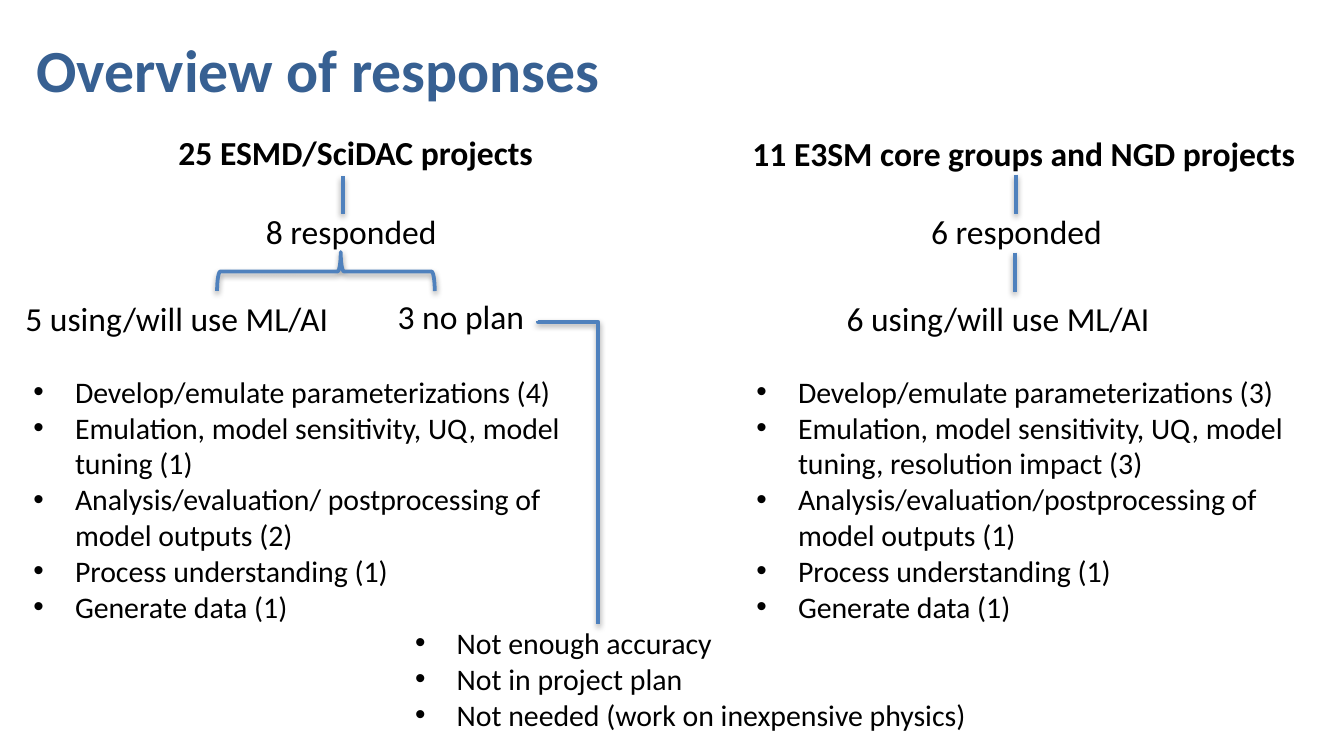
from lxml import etree
from pptx import Presentation
from pptx.dml.color import RGBColor
from pptx.enum.shapes import MSO_CONNECTOR, MSO_SHAPE
from pptx.enum.text import MSO_ANCHOR
from pptx.oxml import parse_xml
from pptx.oxml.ns import qn
from pptx.util import Inches, Pt

STRAIGHT, ELBOW = MSO_CONNECTOR.STRAIGHT, MSO_CONNECTOR.ELBOW
BRACE = MSO_SHAPE.RIGHT_BRACE
BOTTOM = MSO_ANCHOR.BOTTOM
INDENT = Inches(0.31)
SHADOW = """
<a:effectLst xmlns:a="http://schemas.openxmlformats.org/drawingml/2006/main">
  <a:outerShdw blurRad="40000" dist="20000" dir="5400000" rotWithShape="0">
    <a:srgbClr val="000000"><a:alpha val="38000"/></a:srgbClr>
  </a:outerShdw>
</a:effectLst>"""

prs = Presentation()
prs.slide_width = Inches(10)
prs.slide_height = Inches(10) * 9 // 16
slide = prs.slides.add_slide(prs.slide_layouts[6])
shapes = slide.shapes


def write(lines, box, size, bold=False, color="000000", bullet=False):
    """Add a text box with one paragraph per line and return its frame."""
    frame = shapes.add_textbox(*map(Inches, box)).text_frame
    frame.word_wrap = True
    frame.text = "\n".join(lines)
    for para in frame.paragraphs:
        if bullet:
            props = para._p.get_or_add_pPr()
            props.set("marL", str(INDENT))
            props.set("indent", str(-INDENT))
            etree.SubElement(props, qn("a:buFont")).set("typeface", "Arial")
            etree.SubElement(props, qn("a:buChar")).set("char", "•")
        for run in para.runs:
            font = run.font
            font.name, font.size, font.bold = "Calibri", Pt(size), bold
            font.color.rgb = RGBColor.from_string(color)
    return frame


def style(shape):
    """Give a line or brace its blue stroke and soft shadow."""
    shape.line.color.rgb = RGBColor.from_string("4F81BD")
    shape.line.width = Pt(2)
    props = shape._element.spPr
    for old in props.findall(qn("a:effectLst")):
        props.remove(old)
    props.append(parse_xml(SHADOW))


title = write(["Overview of responses"], (0.17, 0.18, 9, 0.65), 32, True, "376092")
title.vertical_anchor = BOTTOM
title.paragraphs[0].line_spacing = 0.9

# Tree labels
for text, left, top, width, bold in [
    ("25 ESMD/SciDAC projects", 1.23, 0.93, 2.87, True),
    ("11 E3SM core groups and NGD projects", 5.5, 0.94, 4.25, True),
    ("8 responded", 1.88, 1.52, 1.58, False),
    ("6 responded", 6.83, 1.52, 1.6, False),
    ("5 using/will use ML/AI", 0.09, 2.17, 2.85, False),
    ("6 using/will use ML/AI", 6.2, 2.17, 2.85, False),
    ("3 no plan", 2.86, 2.15, 1.56, False),
]:
    write([text], (left, top, width, 0.4), 18, bold)

# Bullet lists
for lines, box in [
    (["Develop/emulate parameterizations (3)",
      "Emulation, model sensitivity, UQ, model tuning, resolution impact (3)",
      "Analysis/evaluation/postprocessing of model outputs (1)",
      "Process understanding (1)",
      "Generate data (1)"], (5.53, 2.73, 4.2, 1.99)),
    (["Develop/emulate parameterizations (4)",
      "Emulation, model sensitivity, UQ, model tuning (1)",
      "Analysis/evaluation/ postprocessing of model outputs (2)",
      "Process understanding (1)",
      "Generate data (1)"], (0.15, 2.73, 4.41, 1.99)),
    (["Not enough accuracy",
      "Not in project plan",
      "Not needed (work on inexpensive physics)"], (2.99, 4.6, 4.41, 0.91)),
]:
    write(lines, box, 16, bullet=True)

# Tree branches
for x, top, end in [(2.55, 1.31, 1.59), (7.56, 1.3, 1.59), (7.55, 1.88, 2.17)]:
    style(shapes.add_connector(STRAIGHT, Inches(x), Inches(top), Inches(x), Inches(end)))

brace = shapes.add_shape(BRACE, Inches(2.28), Inches(1.21), Inches(0.29), Inches(1.62))
brace.rotation = 270
brace.adjustments[0], brace.adjustments[1] = 0.083, 0.568
brace.fill.background()
style(brace)

# Elbow from "3 no plan" to its reasons: right, then down, once turned
elbow = shapes.add_connector(ELBOW, Inches(5.35), Inches(3.29), Inches(3.1), Inches(3.74))
elbow._element.spPr.find(qn("a:xfrm")).set("rot", "16200000")
guides = elbow._element.spPr.find(qn("a:prstGeom")).find(qn("a:avLst"))
guide = etree.SubElement(guides, qn("a:gd"))
guide.set("name", "adj1")
guide.set("fmla", "val 200")
style(elbow)

prs.save("out.pptx")
